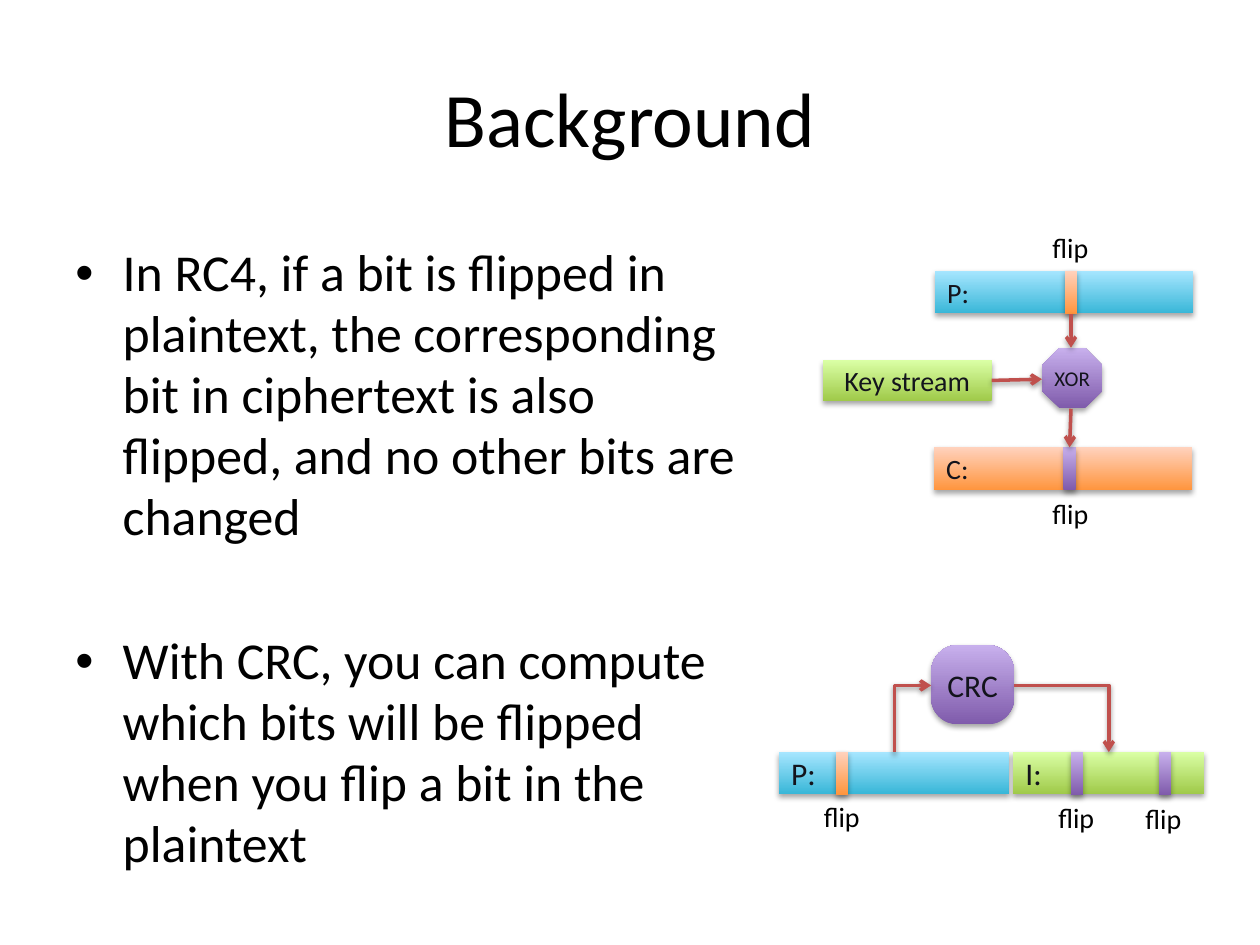
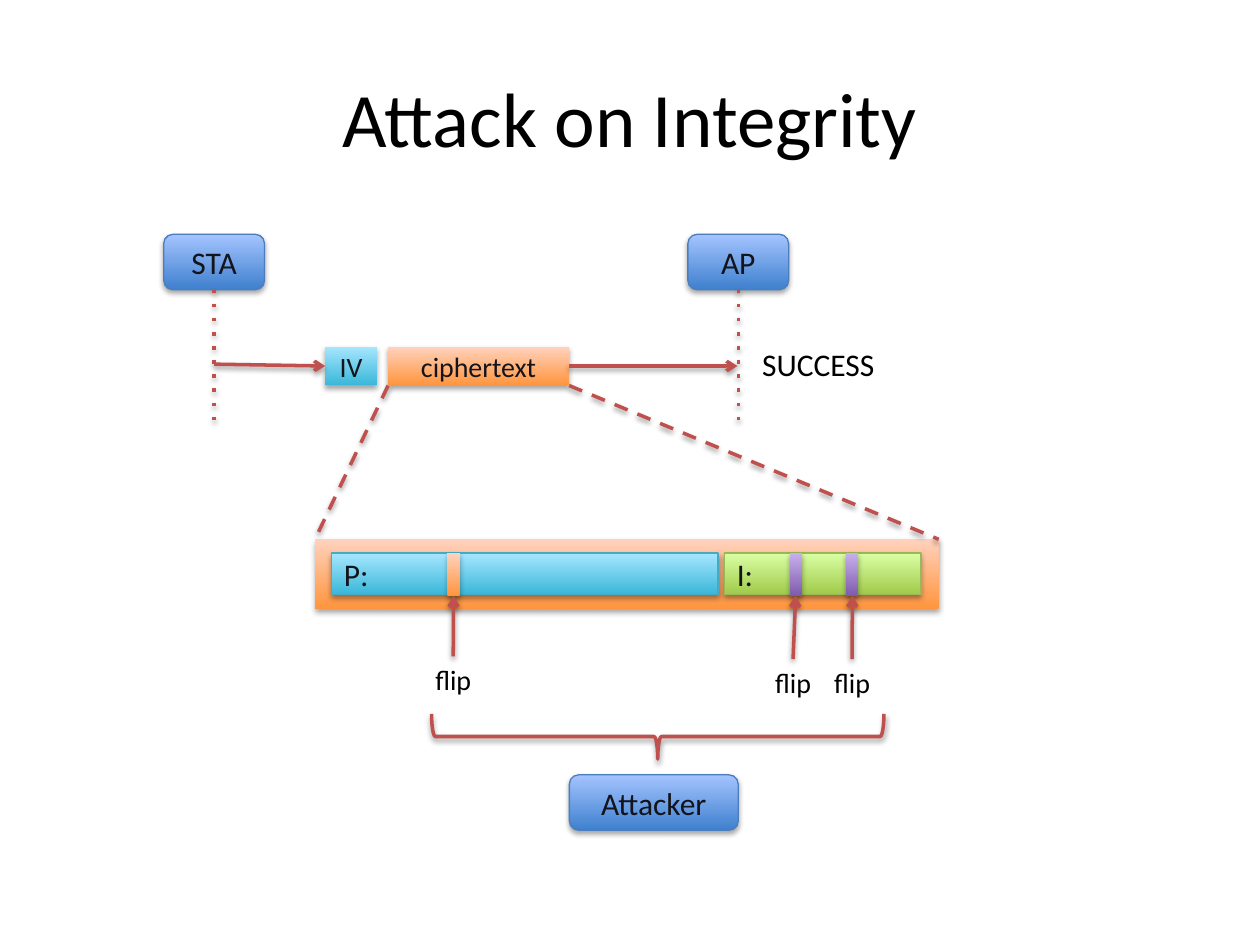
from lxml.etree import SubElement
from pptx import Presentation
from pptx.dml.color import RGBColor
from pptx.enum.shapes import MSO_CONNECTOR, MSO_SHAPE
from pptx.enum.text import MSO_ANCHOR, PP_ALIGN
from pptx.oxml.ns import qn
from pptx.util import Pt

INK = {"black": "000000", "dark": "13141C", "red": "C0504D"}
# Gradient pairs: bottom, top
HUES = {
    "cyan": ("39B7D8", "A7E6FF"),
    "orange": ("FF953E", "FFD2BD"),
    "green": ("A0CA4A", "DAFFA5"),
    "purple": ("7F5BAB", "C8B0ED"),
    "blue": ("3F80CE", "A4C4FF"),
}
EDGES = {"blue": "4B7EBC", "cyan": "46AAC5", "green": "98B955"}
LEFT, MID = PP_ALIGN.LEFT, PP_ALIGN.CENTER
FRAME = {"word_wrap": True, "vertical_anchor": MSO_ANCHOR.MIDDLE}
LOOSE = {"word_wrap": False, "vertical_anchor": MSO_ANCHOR.TOP}
TIGHT = {"margin_left": 0, "margin_right": 0}
TOP, BOTTOM, SIDE, RIGHT = 0, 2, 1, 3


def put(item, vals):
    for name, val in vals.items():
        setattr(item, name, val)


def rgb(code):
    return RGBColor.from_string(code)


class Deck:
    """Holds the shared style and the current slide."""

    def __init__(self):
        self.prs = Presentation()
        put(self.prs, {"slide_width": Pt(720), "slide_height": Pt(540)})
        self.font = "Calibri"

    def page(self, title):
        self.slide = self.prs.slides.add_slide(self.prs.slide_layouts[6])
        self.shapes = self.slide.shapes
        self.text(title, (36, 21.6, 648, 90), 44, MID, FRAME)

    def label(self, para, words, size, ink, align, **extra):
        run = para.add_run()
        run.text = words
        put(para, {"alignment": align, **extra})
        put(run.font, {"name": self.font, "size": Pt(size)})
        run.font.color.rgb = rgb(INK[ink])

    def text(self, words, area, size, align=LEFT, frame=LOOSE):
        box = self.shapes.add_textbox(*map(Pt, area))
        put(box.text_frame, frame)
        self.label(box.text_frame.paragraphs[0], words, size, "black", align)
        return box

    def points(self, items, area, size, gap):
        frame = self.shapes.add_textbox(*map(Pt, area)).text_frame
        frame.word_wrap = True
        for num, words in enumerate(items):
            para = frame.add_paragraph() if num else frame.paragraphs[0]
            self.label(para, words, size, "black", LEFT, line_spacing=0.98,
                       space_before=Pt(gap if num else 0))
            props = para._p.get_or_add_pPr()
            props.set("marL", str(Pt(27)))
            props.set("indent", str(-Pt(27)))
            SubElement(props, qn("a:buFont"), typeface="Arial")
            SubElement(props, qn("a:buChar"), char="•")

    def shade(self, props, alpha, drop):
        group = props.find(qn("a:effectLst"))
        if group is None:
            group = SubElement(props, qn("a:effectLst"))
        glow = SubElement(group, qn("a:outerShdw"), blurRad=str(Pt(3.1)),
                          dist=str(Pt(drop)), dir="5400000", rotWithShape="0")
        tone = SubElement(glow, qn("a:srgbClr"), val=INK["black"])
        SubElement(tone, qn("a:alpha"), val=str(alpha * 1000))

    def stroke(self, line):
        line.color.rgb = rgb(INK["red"])
        line.width = Pt(2)

    def box(self, hue, area, words="", size=18, align=MID, kind="RECTANGLE",
            edge=False, frame=None):
        item = self.shapes.add_shape(getattr(MSO_SHAPE, kind), *map(Pt, area))
        item.fill.gradient()
        item.fill.gradient_angle = 90
        for stop, code in zip(item.fill.gradient_stops, HUES[hue]):
            stop.color.rgb = rgb(code)
        if edge:
            item.line.color.rgb = rgb(EDGES[hue])
            item.line.width = Pt(0.75)
        else:
            item.line.fill.background()
        item.shadow.inherit = False
        self.shade(item._element.spPr, 35, 1.8)
        put(item.text_frame, {**FRAME, **(frame or {})})
        if words:
            self.label(item.text_frame.paragraphs[0], words, size, "dark", align)
        return item

    def mark(self, hue, mid, top):
        return self.box(hue, (mid - 3.5, top, 7, 24.4))

    def flip(self, mid, top):
        return self.text("flip", (mid - 17.65, top, 35.3, 26.6), 16, MID)

    def node(self, words, left, top, width=57.6):
        return self.box("blue", (left, top, width, 31.7), words,
                        kind="ROUNDED_RECTANGLE", edge=True)

    def brace(self, area):
        item = self.shapes.add_shape(MSO_SHAPE.LEFT_BRACE, *map(Pt, area))
        item.rotation = 270
        item.fill.background()
        self.stroke(item.line)
        item.shadow.inherit = False
        self.shade(item._element.spPr, 38, 1.6)

    def link(self, start, end, dash=None, tip="tailEnd", bent=False):
        """Each end is an (x, y) point or a (shape, side) pair."""
        glue = [not isinstance(spot[0], (int, float)) for spot in (start, end)]
        spots = [(0, 0) if on else spot for on, spot in zip(glue, (start, end))]
        kind = MSO_CONNECTOR.ELBOW if bent else MSO_CONNECTOR.STRAIGHT
        line = self.shapes.add_connector(kind, *map(Pt, spots[0] + spots[1]))
        if glue[0]:
            line.begin_connect(*start)
        if glue[1]:
            line.end_connect(*end)
        props = line._element.spPr
        if bent:
            props.find(qn("a:prstGeom")).set("prst", "bentConnector2")
        self.stroke(line.line)
        edge = props.find(qn("a:ln"))
        if dash:
            SubElement(edge, qn("a:prstDash"), val=dash)
        else:
            SubElement(edge, qn("a:" + tip), type="arrow")
        self.shade(props, 38, 1.6)


def basics(deck):
    deck.page("Background")
    deck.points([
        "In RC4, if a bit is flipped in plaintext, the corresponding bit in "
        "ciphertext is also flipped, and no other bits are changed",
        "With CRC, you can compute which bits will be flipped when you flip "
        "a bit in the plaintext",
    ], (36, 135.4, 406, 369.4), 29.6, 47.5)

    # Stream cipher
    deck.box("cyan", (534.2, 154.8, 147.6, 24.2), "P:", 16, LEFT)
    deck.box("orange", (533.6, 255.6, 147.6, 24.5), "C:", 16, LEFT)
    key = deck.box("green", (470.2, 205.9, 96.5, 23), "Key stream", 16)
    deck.box("purple", (595.4, 198.7, 34.6, 34.6), "XOR", 12,
             kind="OCTAGON", frame=TIGHT)
    plain = deck.mark("orange", 612, 154.8)
    coded = deck.mark("purple", 611.2, 255.6)
    deck.link((plain, BOTTOM), (612, 198.7))
    deck.link((key, RIGHT), (595.4, 216.7))
    deck.link((612, 233.6), (coded, TOP))
    for top in (128.2, 280.1):
        deck.flip(611.6, top)

    # Checksum
    top = 429.8
    deck.box("cyan", (445, top, 131.8, 23.8), "P:", align=LEFT)
    deck.box("green", (578.9, top, 109.4, 23.8), "I:", align=LEFT)
    crc = deck.box("purple", (532.1, 368.6, 47.5, 45.4), "CRC",
                   kind="ROUNDED_RECTANGLE", frame=TIGHT)
    crc.adjustments[0] = 0.34
    deck.link((532.1, 391.7), (511.2, top), tip="headEnd", bent=True)
    deck.link((579.6, 391.7), (633.6, top), bent=True)
    for hue, mid, low in (("orange", 481, 0), ("purple", 615.6, 0.6),
                          ("purple", 665.6, 0.8)):
        deck.mark(hue, mid, top)
        deck.flip(mid - low, top + 23.8 + low)


def attack(deck):
    deck.page("Attack on Integrity")

    # Stations and their time lines
    for words, left in (("STA", 93.6), ("AP", 393.1)):
        node = deck.node(words, left, 133.9)
        deck.link((node, BOTTOM), (left + 28.8, 245.5), "dot")

    # Packet on its way
    coded = deck.box("orange", (221.8, 198, 103.4, 22.3), "ciphertext", 16)
    start = deck.box("cyan", (185.8, 198, 29.5, 22.3), "IV", 16)
    deck.link((122.4, 208.1), (start, SIDE))
    deck.link((coded, RIGHT), (421.4, 209.15))
    deck.text("SUCCESS", (428.4, 193.7, 87.8, 28.8), 18)

    # Packet in detail
    deck.box("orange", (180, 308.2, 356.4, 39.6))
    deck.box("cyan", (189.4, 316.1, 221, 23.8), "P:", align=LEFT, edge=True)
    deck.box("green", (414, 316.1, 112.3, 23.8), "I:", align=LEFT, edge=True)
    deck.link((221.8, 220.3), (180, 308.2), "dash")
    deck.link((325.2, 220.3), (536.4, 308.2), "dash")

    # Flipped bits
    for hue, mid, name, top in (("orange", 259.2, 259, 375.1),
                                ("purple", 454.7, 453.2, 376.6),
                                ("purple", 487.1, 486.9, 376.6)):
        bit = deck.mark(hue, mid, 316.1)
        deck.link((deck.flip(name, top), TOP), (bit, BOTTOM))

    # Attacker
    deck.brace((362.9, 291.6, 25.9, 258.5))
    deck.node("Attacker", 325.4, 442.8, 96.5)


def main():
    deck = Deck()
    basics(deck)
    attack(deck)
    deck.prs.save("out.pptx")


if __name__ == "__main__":
    main()
